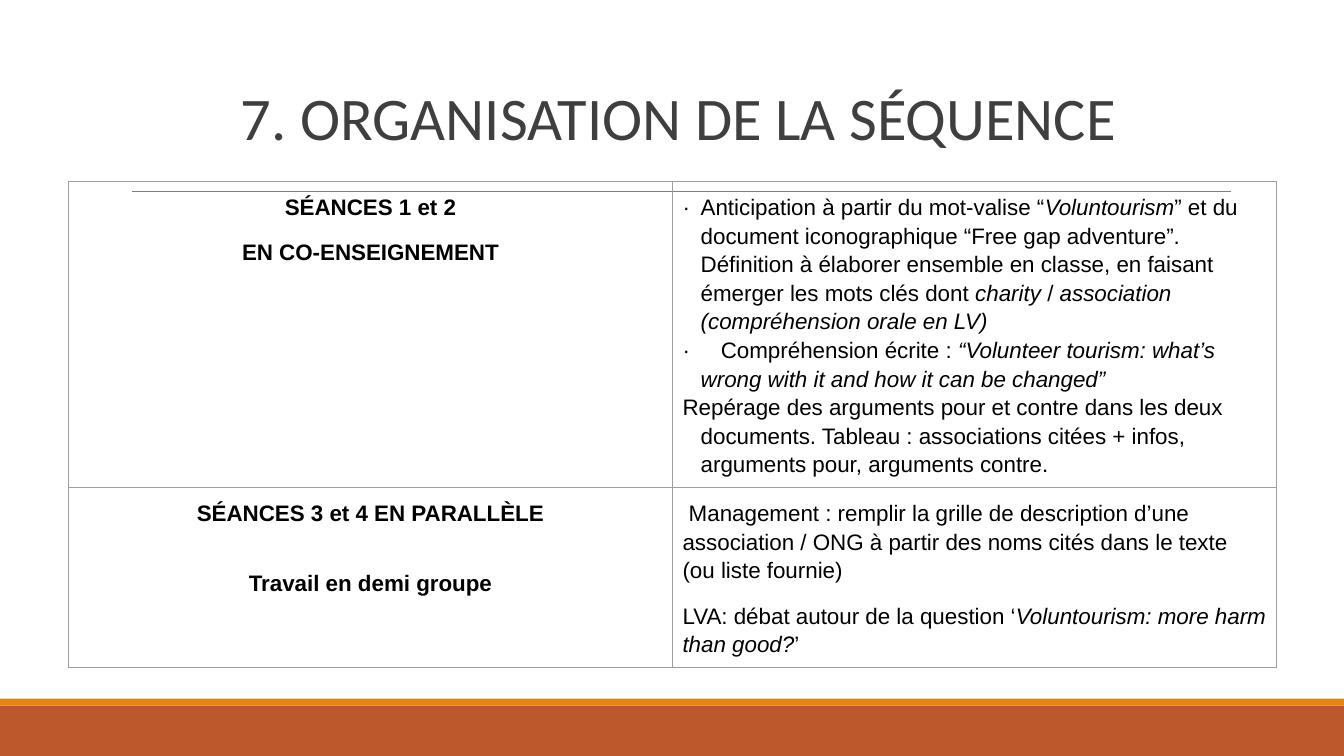
import dataclasses

import lxml.etree
import pptx
import pptx.dml.color
import pptx.enum.shapes
import pptx.enum.text
import pptx.oxml.ns
import pptx.util

PP = pptx.enum.text.PP_ALIGN
qn = pptx.oxml.ns.qn


@dataclasses.dataclass(frozen=True)
class Theme:
    rust: str = "BD582C"
    orange: str = "E48312"
    rule: str = "7F7F7F"
    border: str = "9E9E9E"
    heading: str = "3F3F3F"
    ink: str = "000000"
    title_font: str = "Calibri"
    body_font: str = "Arial"
    title_size: float = 43.2
    body_size: float = 16
    line_width: float = 0.75
    leading: float = 1.15
    gap: float = 12
    hang: float = 0.18


def rgb(value):
    return pptx.dml.color.RGBColor.from_string(value)


def add_text(p, text, font, size, color, bold=False, italic=False):
    r = p.add_run()
    r.text = text
    f = r.font
    f.name, f.size, f.bold, f.italic = font, pptx.util.Pt(size), bold, italic
    f.color.rgb = rgb(color)


class Deck:
    """Current slide, on a grid of 100 columns by 100 rows."""

    def __init__(self, theme):
        self.theme = theme
        self.prs = pptx.Presentation()
        self.prs.slide_width = pptx.util.Inches(13.33)
        self.prs.slide_height = pptx.util.Inches(7.5)
        self.s = self.prs.slides.add_slide(self.prs.slide_layouts[5])

    def x(self, cols):
        return round(self.prs.slide_width * cols / 100)

    def y(self, rows):
        return round(self.prs.slide_height * rows / 100)

    def box(self, left, top, width, height):
        return self.x(left), self.y(top), self.x(width), self.y(height)

    def band(self, top, height, color):
        kind = pptx.enum.shapes.MSO_SHAPE.RECTANGLE
        sp = self.s.shapes.add_shape(kind, *self.box(0, top, 100, height))
        sp.shadow.inherit = False
        sp.fill.solid()
        sp.fill.fore_color.rgb = rgb(color)
        sp.line.fill.background()

    def rule(self, left, right, row):
        kind = pptx.enum.shapes.MSO_CONNECTOR.STRAIGHT
        line = self.s.shapes.add_connector(
            kind, self.x(left), self.y(row), self.x(right), self.y(row))
        line.line.color.rgb = rgb(self.theme.rule)
        line.line.width = pptx.util.Pt(self.theme.line_width)
        lxml.etree.SubElement(line._element.spPr, qn("a:effectLst"))

    def title(self, text, *place):
        t = self.theme
        sp = self.s.shapes.title
        sp.left, sp.top, sp.width, sp.height = self.box(*place)
        tf = sp.text_frame
        tf.auto_size = pptx.enum.text.MSO_AUTO_SIZE.NONE
        tf.vertical_anchor = pptx.enum.text.MSO_ANCHOR.BOTTOM
        p = tf.paragraphs[0]
        p.alignment, p.line_spacing = PP.LEFT, 0.85
        add_text(p, text, t.title_font, t.title_size, t.heading)

    def table(self, rows, heights, left, top, width):
        gf = self.s.shapes.add_table(
            len(rows), len(rows[0]), *self.box(left, top, width, sum(heights)))
        tbl = gf.table
        tbl.first_row = tbl.horz_banding = False
        for i, (row, height) in enumerate(zip(rows, heights)):
            tbl.rows[i].height = self.y(height)
            for j, paragraphs in enumerate(row):
                self.cell(tbl.cell(i, j), paragraphs)

    def cell(self, cell, paragraphs):
        inset = pptx.util.Inches(0.1)
        cell.margin_left = cell.margin_right = inset
        cell.margin_top = cell.margin_bottom = inset
        self.borders(cell)
        cell.fill.background()
        tf = cell.text_frame
        for i, item in enumerate(paragraphs):
            p = tf.add_paragraph() if i else tf.paragraphs[0]
            self.paragraph(p, **item)

    def borders(self, cell):
        tcPr = cell._tc.get_or_add_tcPr()
        for side in ("a:lnL", "a:lnR", "a:lnT", "a:lnB"):
            ln = lxml.etree.SubElement(tcPr, qn(side))
            ln.set("w", str(pptx.util.Pt(self.theme.line_width)))
            fill = lxml.etree.SubElement(ln, qn("a:solidFill"))
            lxml.etree.SubElement(fill, qn("a:srgbClr")).set("val", self.theme.border)

    def paragraph(self, p, runs, align=PP.LEFT, bold=False, before=0,
                  leading=None, hang=False, bullet=None, tab=None):
        t = self.theme
        p.alignment = align
        p.line_spacing = leading or t.leading
        p.space_before = pptx.util.Pt(before)
        pPr = p._p.get_or_add_pPr()
        if hang:
            indent = pptx.util.Inches(t.hang)
            pPr.set("marL", str(indent))
            pPr.set("indent", str(-indent))
        if bullet:
            lxml.etree.SubElement(pPr, qn("a:buFont")).set("typeface", t.body_font)
            lxml.etree.SubElement(pPr, qn("a:buChar")).set("char", bullet)
        if tab:
            stops = lxml.etree.SubElement(pPr, qn("a:tabLst"))
            stop = lxml.etree.SubElement(stops, qn("a:tab"))
            stop.set("pos", str(pptx.util.Inches(tab)))
            stop.set("algn", "l")
        # Every second run is in italics
        for i, text in enumerate(runs):
            add_text(p, text, t.body_font, t.body_size, t.ink,
                     bold=bold, italic=i % 2 == 1)


def label(text, **options):
    return dict(runs=[text], align=PP.CENTER, bold=True, **options)


def main():
    theme = Theme()
    deck = Deck(theme)

    # Footer bands and title rule
    deck.band(93.33, 6.67, theme.rust)
    deck.band(92.4, 0.93, theme.orange)
    deck.rule(9.83, 91.6, 25.33)

    # Title
    deck.title("7. ORGANISATION DE LA SÉQUENCE", 17.18, 11.73, 73.89, 9.2)

    # Sessions table
    joint = [
        label("SÉANCES 1 et 2", before=theme.gap),
        label("EN CO-ENSEIGNEMENT", before=theme.gap),
    ]
    joint_tasks = [
        dict(hang=True, bullet="·", runs=[
            "Anticipation à partir du mot-valise “", "Voluntourism",
            "” et du document iconographique “Free gap adventure”. Définition à "
            "élaborer ensemble en classe, en faisant émerger les mots clés dont ",
            "charity ", "/ ", "association (compréhension orale en LV)"]),
        dict(hang=True, bullet="·", tab=0.38, runs=[
            "\tCompréhension écrite : ",
            "“Volunteer tourism: what’s wrong with it and how it can be changed”"]),
        dict(hang=True, runs=[
            "Repérage des arguments pour et contre dans les deux documents. Tableau : "
            "associations citées + infos, arguments pour, arguments contre."]),
    ]
    parallel = [
        label("SÉANCES 3 et 4 EN PARALLÈLE", before=theme.gap),
        label("Travail en demi groupe", before=32, leading=1.0),
    ]
    parallel_tasks = [
        dict(runs=[
            " Management : remplir la grille de description d’une association / ONG "
            "à partir des noms cités dans le texte (ou liste fournie)"]),
        dict(before=theme.gap, runs=[
            "LVA: débat autour de la question ‘",
            "Voluntourism: more harm than good?", "’"]),
    ]
    deck.table([[joint, joint_tasks], [parallel, parallel_tasks]],
               heights=[40.47, 23.8], left=5.1, top=24, width=89.87)

    deck.prs.save("out.pptx")


if __name__ == "__main__":
    main()
